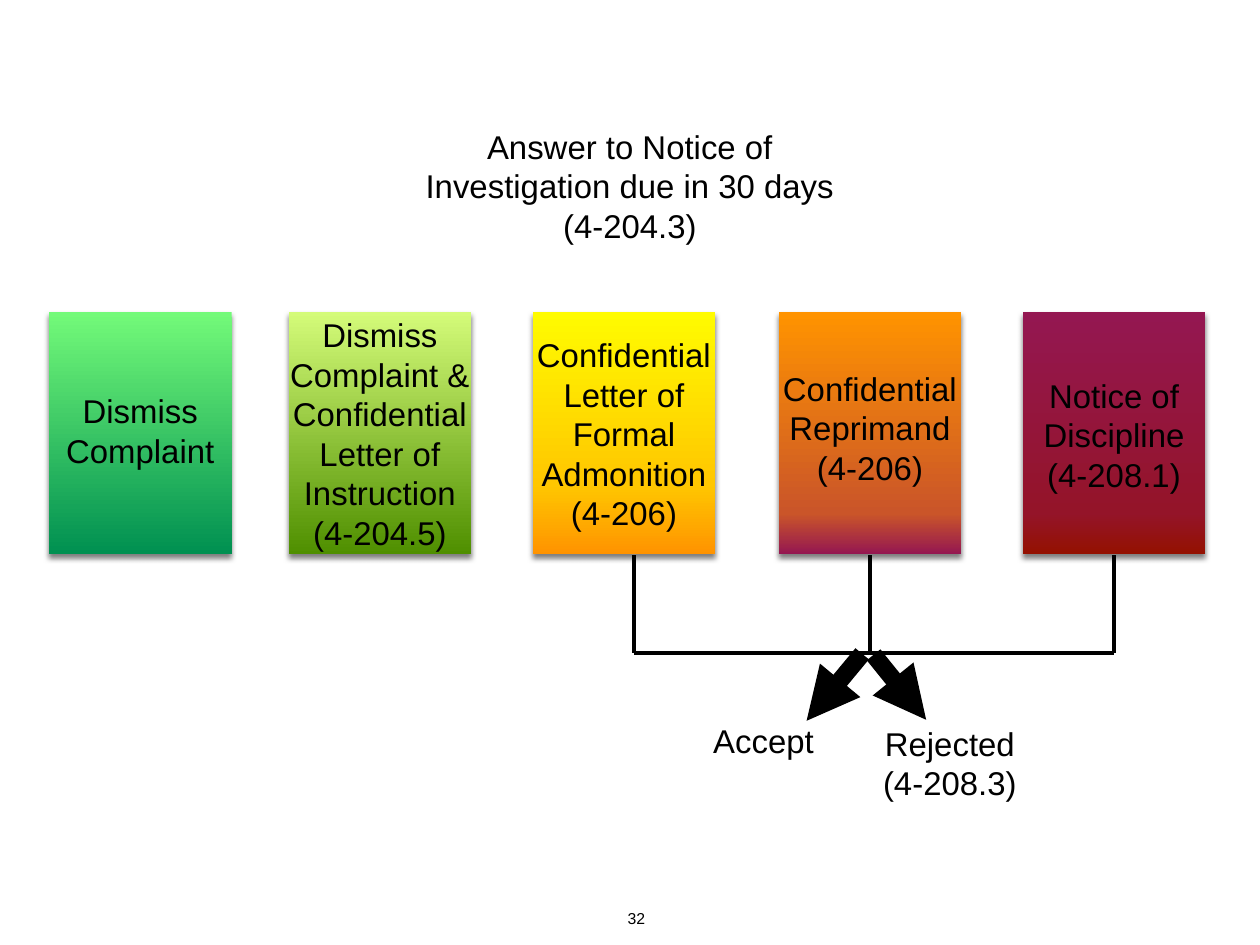
from lxml import etree
from pptx import Presentation
from pptx.dml.color import RGBColor
from pptx.enum.shapes import MSO_CONNECTOR, MSO_SHAPE
from pptx.enum.text import MSO_ANCHOR, MSO_AUTO_SIZE, PP_ALIGN
from pptx.oxml.ns import qn
from pptx.util import Cm, Pt

STRAIGHT = MSO_CONNECTOR.STRAIGHT
RECTANGLE = MSO_SHAPE.RECTANGLE
MIDDLE, TOP = MSO_ANCHOR.MIDDLE, MSO_ANCHOR.TOP
CENTER = PP_ALIGN.CENTER
GROW = MSO_AUTO_SIZE.SHAPE_TO_FIT_TEXT
BOTTOM_SIDE = 2

COLORS = {
    "black": "000000",
    "mint": "73FA79", "green": "009051",
    "lime": "D4FB79", "moss": "4F8F00",
    "yellow": "FFFB00", "gold": "FFC700", "orange": "FF9300",
    "rust": "CA5529", "plum": "941751",
    "crimson": "941429", "dark red": "941100",
}

# Outcome boxes, in cm: left, text width, vertical text shift, text, gradient stops
BOX_TOP, BOX_WIDTH, BOX_HEIGHT = 6.3, 3.68, 4.88
OUTCOMES = [
    (0.99, 3.68, -0.06, "Dismiss Complaint", [(0, "mint"), (100, "green")]),
    (5.82, 3.89, 0, "Dismiss Complaint & Confidential Letter of Instruction (4-204.5)",
     [(0, "lime"), (100, "moss")]),
    (10.74, 3.89, 0, "Confidential Letter of Formal Admonition (4-206)",
     [(0, "yellow"), (71, "gold"), (100, "orange")]),
    (15.7, 3.89, -0.12, "Confidential Reprimand (4-206)",
     [(0, "orange"), (83, "rust"), (100, "plum")]),
    (20.62, 3.89, 0.02, "Notice of Discipline (4-208.1)",
     [(0, "plum"), (83, "crimson"), (100, "dark red")]),
]


def add_text(shapes, text, left, top, width, height, *, size=18.8, wrap=True,
             anchor=MIDDLE, inset=0.05):
    box = shapes.add_textbox(Cm(left), Cm(top), Cm(width), Cm(height))
    frame = box.text_frame
    frame.word_wrap = wrap
    frame.auto_size = GROW
    frame.vertical_anchor = anchor
    frame.margin_left = frame.margin_right = Cm(inset)
    frame.margin_top = frame.margin_bottom = Cm(inset)
    paragraph = frame.paragraphs[0]
    paragraph.alignment = CENTER
    run = paragraph.add_run()
    run.text = text
    run.font.name = "Arial"
    run.font.size = Pt(size)
    run.font.color.rgb = RGBColor.from_string(COLORS["black"])


def add_color(parent, name):
    return etree.SubElement(parent, qn("a:srgbClr"), val=COLORS[name])


def set_gradient(shape, stops):
    """Fill from top to bottom; stops are (percent, colour name)."""
    shape.fill.gradient()
    shape.fill.gradient_angle = 270
    stop_list = shape._element.spPr.find(".//" + qn("a:gsLst"))
    for stop in list(stop_list):
        stop_list.remove(stop)
    for percent, name in stops:
        add_color(etree.SubElement(stop_list, qn("a:gs"), pos=str(percent * 1000)), name)


def set_shadow(shape):
    """Soft shadow straight below the shape."""
    shape.shadow.inherit = False
    effects = shape._element.spPr.find(qn("a:effectLst"))
    shadow = etree.SubElement(effects, qn("a:outerShdw"), blurRad=str(Pt(3)),
                              dist=str(Pt(2)), dir="5400000", rotWithShape="0")
    etree.SubElement(add_color(shadow, "black"), qn("a:alpha"), val="50000")


def add_line(shapes, start, end, width=2, arrow=False):
    line = shapes.add_connector(STRAIGHT, *(Cm(value) for value in (*start, *end)))
    line.line.width = Pt(width)
    line.line.color.rgb = RGBColor.from_string(COLORS["black"])
    if arrow:
        etree.SubElement(line.line._get_or_add_ln(), qn("a:tailEnd"), type="triangle")
    etree.SubElement(line._element.spPr, qn("a:effectLst"))
    return line


def add_outcome(slide, left, top, width, height, text, text_width, shift, stops):
    shapes = slide.shapes.add_group_shape().shapes
    box = shapes.add_shape(RECTANGLE, Cm(left), Cm(top), Cm(width), Cm(height))
    set_gradient(box, stops)
    box.line.fill.background()
    set_shadow(box)
    add_text(shapes, text, left + (width - text_width) / 2, top + shift,
             text_width, height)
    return box


def add_response(slide, left, top, width, height, reprimand, discipline):
    """Bracket under the last three boxes, with its two arrows and answers."""
    shapes = slide.shapes
    right, bottom = left + width, top + height
    middle = left + 4.75

    # Bracket
    add_line(shapes, (left, bottom), (left, top))
    for x, box in ((middle, reprimand), (right, discipline)):
        stem = add_line(shapes, (x, bottom), (x, top))
        stem.end_connect(box, BOTTOM_SIDE)
        stem.begin_x = stem.end_x
    add_line(shapes, (left, bottom), (right, bottom))

    # Arrows
    add_line(shapes, (middle - 0.15, bottom + 0.02), (middle - 1.27, bottom + 1.37),
             width=10, arrow=True)
    add_line(shapes, (middle + 0.08, bottom + 0.04), (middle + 1.14, bottom + 1.35),
             width=10, arrow=True)

    # Answers
    add_text(shapes, "Accept", left + 1.4, bottom + 1.32, 2.43, 0.91, wrap=False)
    add_text(shapes, "Rejected (4-208.3)", left + 4.82, bottom + 1.37, 3.1, 1.7)


def main():
    presentation = Presentation()
    presentation.slide_width, presentation.slide_height = Cm(25.4), Cm(19.05)
    slide = presentation.slides.add_slide(presentation.slide_layouts[6])

    # Heading
    add_text(slide.shapes, "Answer to Notice of Investigation due in 30 days (4-204.3)",
             8.38, 2.49, 8.64, 2.51)

    # Outcomes
    boxes = [add_outcome(slide, left, BOX_TOP, BOX_WIDTH, BOX_HEIGHT,
                         text, text_width, shift, stops)
             for left, text_width, shift, text, stops in OUTCOMES]

    # Response to the last three outcomes
    add_response(slide, 12.78, BOX_TOP + BOX_HEIGHT, 9.68, 1.98, *boxes[-2:])

    # Page number
    add_text(slide.shapes, "32", 12.45, 18.16, 0.76, 0.66,
             size=9, wrap=False, anchor=TOP, inset=0.15)

    presentation.save("out.pptx")


if __name__ == "__main__":
    main()
